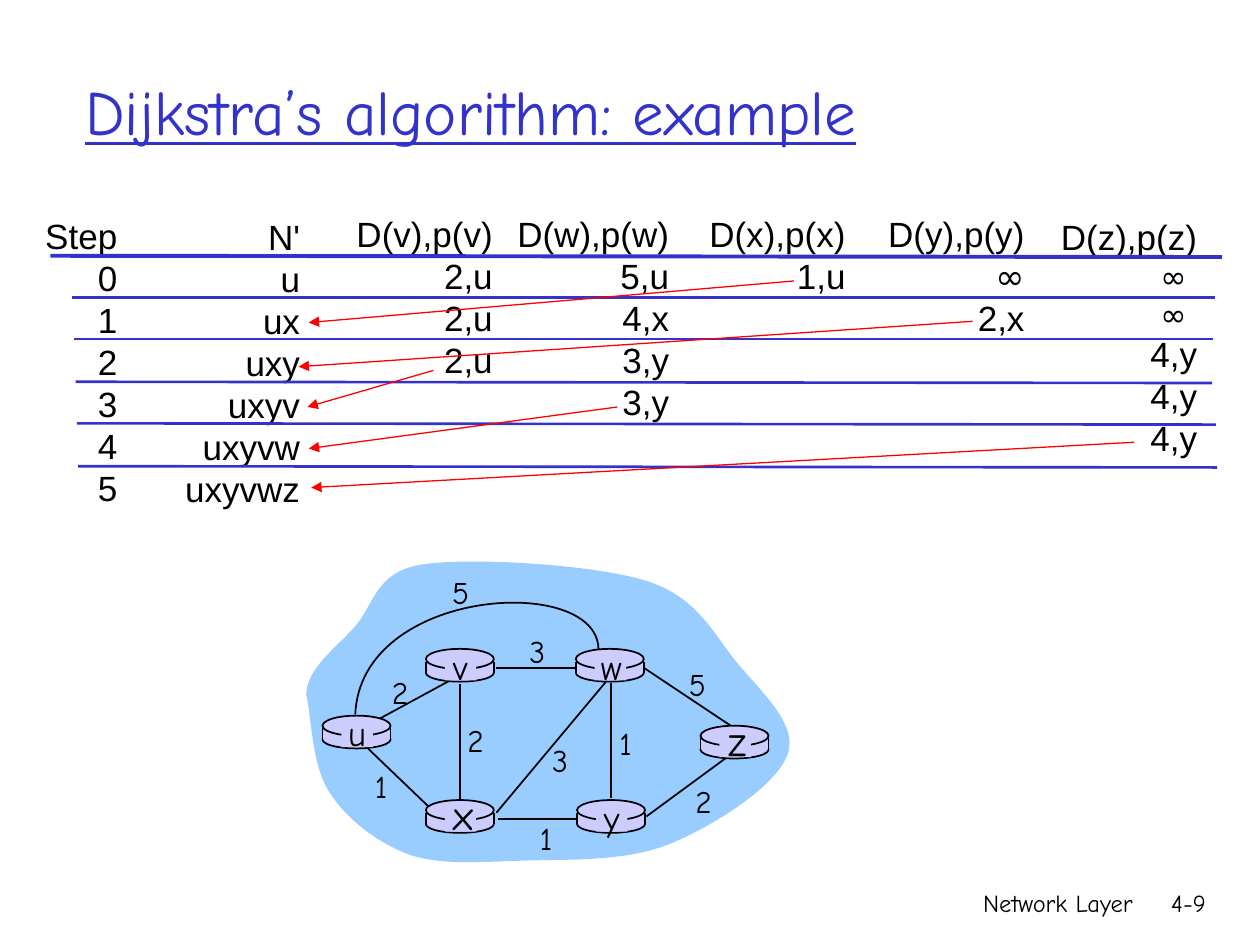
import dataclasses

import lxml.etree
import pptx
import pptx.dml.color
import pptx.enum.shapes
import pptx.enum.text
import pptx.oxml.ns
import pptx.util

Inches = pptx.util.Inches
Pt = pptx.util.Pt
qn = pptx.oxml.ns.qn
rgb = pptx.dml.color.RGBColor.from_string
ALIGN = pptx.enum.text.PP_ALIGN
ANCHOR = pptx.enum.text.MSO_ANCHOR
FIT = pptx.enum.text.MSO_AUTO_SIZE
SHAPE = pptx.enum.shapes.MSO_SHAPE
STRAIGHT = pptx.enum.shapes.MSO_CONNECTOR.STRAIGHT


@dataclasses.dataclass(frozen=True)
class Theme:
    ink = rgb("000000")
    blue = rgb("3333CC")
    red = rgb("FF0000")
    cloud = rgb("99CCFF")
    router = rgb("CCCCFF")
    hand = "Comic Neue"
    sans = "Arial"
    title = 36
    big = 24
    body = 20
    weight = 18
    footer = 14


theme = Theme()
deck = pptx.Presentation()
deck.slide_width, deck.slide_height = Inches(10), Inches(7.5)
slide = deck.slides.add_slide(deck.slide_layouts[6])
shapes = slide.shapes


def write(text, left, top, width, height, size=theme.body, font=theme.hand,
          color=theme.ink, align=ALIGN.CENTER, anchor=ANCHOR.TOP,
          underline=None, wrap=False, infinity_size=theme.body):
    box = shapes.add_textbox(Inches(left), Inches(top), Inches(width), Inches(height))
    frame = box.text_frame
    frame.word_wrap = wrap
    frame.auto_size = FIT.NONE if wrap else FIT.SHAPE_TO_FIT_TEXT
    frame.vertical_anchor = anchor
    frame.text = text
    for paragraph in frame.paragraphs:
        paragraph.alignment = align
        run = paragraph.runs[0]
        infinite = run.text.startswith("∞")
        run.font.name = theme.hand if infinite else font
        run.font.size = Pt(infinity_size if infinite else size)
        run.font.color.rgb = color
        run.font.underline = underline


def draw_line(start, end, color=theme.ink, weight=1, arrow=False):
    line = shapes.add_connector(STRAIGHT, *map(Inches, start + end))
    line.line.color.rgb = color
    line.line.width = Pt(weight)
    if arrow:
        lxml.etree.SubElement(line.line._get_or_add_ln(), qn("a:tailEnd"), type="triangle")
    lxml.etree.SubElement(line._element.spPr, qn("a:effectLst"))


write("Network Layer", 5.92, 7, 3.17, 0.5, size=theme.footer, align=ALIGN.RIGHT, wrap=True)
write("4-9", 8.93, 7, 0.74, 0.5, size=theme.footer, align=ALIGN.RIGHT, wrap=True)
write("Dijkstra’s algorithm: example", 0.58, 0.25, 8.5, 1.25, size=theme.title,
      color=theme.blue, align=ALIGN.LEFT, anchor=ANCHOR.MIDDLE, underline=True, wrap=True)

step_columns = [
    (0.26, 1.65, 0.77, ["Step", "0", "1", "2", "3", "4", "5"]),
    (1.37, 1.66, 1.11, ["N'", "u", "ux", "uxy", "uxyv", "uxyvw", "uxyvwz"]),
    (2.73, 1.64, 1.28, ["D(v),p(v)", "2,u", "2,u", "2,u"]),
    (3.96, 1.64, 1.45, ["D(w),p(w)", "5,u", "4,x", "3,y", "3,y"]),
    (5.53, 1.64, 1.28, ["D(x),p(x)", "1,u"]),
    (6.95, 1.64, 1.28, ["D(y),p(y)", "∞", "2,x"]),
    (8.32, 1.66, 1.28, ["D(z),p(z)", "∞ ", "∞ ", "4,y", "4,y", "4,y"]),
]
for left, top, width, entries in step_columns:
    write("\n".join(entries), left, top, width, 0.1 + len(entries) / 3,
          font=theme.sans, align=ALIGN.RIGHT,
          infinity_size=theme.weight if "∞ " in entries else theme.body)

draw_line((0.4, 2.03), (9.7, 2.04), theme.blue, 2.25)
row_rules = [
    ((0.57, 2.36), (9.64, 2.36)),
    ((0.59, 2.69), (9.63, 2.69)),
    ((0.6, 3.03), (9.62, 3.04)),
    ((0.61, 3.36), (9.65, 3.37)),
    ((0.62, 3.7), (9.66, 3.71)),
]
for start, end in row_rules:
    draw_line(start, end, theme.blue, 1.5)

cloud_outline = [
    (2.43, 5.51), (2.44, 5.3), (2.66, 5.15), (2.81, 4.98),
    (2.97, 4.81), (2.97, 4.54), (3.35, 4.48), (3.74, 4.42), (4.71, 4.48), (5.13, 4.61),
    (5.54, 4.74), (5.66, 5.03), (5.85, 5.26), (6.04, 5.49), (6.34, 5.75), (6.25, 5.99),
    (6.16, 6.24), (5.66, 6.56), (5.31, 6.7), (4.96, 6.84), (4.5, 6.82), (4.16, 6.83),
    (3.81, 6.84), (3.5, 6.87), (3.24, 6.78), (2.98, 6.68), (2.74, 6.49), (2.61, 6.28),
    (2.47, 6.06), (2.47, 5.66), (2.43, 5.51),
]
u_to_w = [(4.75, 5.15), (4.74, 4.55), (2.86, 4.66), (2.82, 5.67)]
for controls, closed in [(cloud_outline, True), (u_to_w, False)]:
    builder = shapes.build_freeform(*map(Inches, controls[0]), scale=1.0)
    builder.add_line_segments([tuple(map(Inches, p)) for p in controls[1:]], close=closed)
    curve = builder.convert_to_shape()
    segments = list(curve._element.iter(qn("a:lnTo")))
    for first in range(0, len(segments), 3):
        bezier = lxml.etree.Element(qn("a:cubicBezTo"))
        segments[first].addprevious(bezier)
        for segment in segments[first:first + 3]:
            bezier.append(segment[0])
            segment.getparent().remove(segment)
    curve.shadow.inherit = False
    if closed:
        curve.fill.solid()
        curve.fill.fore_color.rgb = theme.cloud
        curve.line.fill.background()
    else:
        curve.fill.background()
        curve.line.color.rgb = theme.ink
        curve.line.width = Pt(1)

edges = [
    ((3.02, 5.7), (3.61, 5.38)),
    ((4.85, 5.42), (4.85, 6.33)),
    ((3.65, 5.43), (3.65, 6.36)),
    ((3.94, 6.45), (4.81, 5.41)),
    ((5.13, 6.48), (5.77, 6.01)),
    ((4.58, 6.5), (3.95, 6.5)),
    ((3.4, 6.4), (2.92, 5.94)),
    ((4.57, 5.3), (3.94, 5.3)),
    ((5.8, 5.76), (5.11, 5.3)),
]
for start, end in edges:
    draw_line(start, end)

routers = [
    ("u", 2.56, 5.68, theme.body), ("x", 3.38, 6.35, theme.big),
    ("v", 3.38, 5.15, theme.body), ("w", 4.57, 5.15, theme.body),
    ("y", 4.58, 6.35, theme.body), ("z", 5.56, 5.76, theme.big),
]
router_parts = [
    (SHAPE.OVAL, 0, 0.12, 0.54, 0.14, True),
    (SHAPE.RECTANGLE, 0, 0.1, 0.54, 0.09, False),
    (SHAPE.OVAL, 0, 0, 0.54, 0.16, True),
    (SHAPE.RECTANGLE, 0.15, 0.02, 0.25, 0.23, False),
]
for name, left, top, size in routers:
    for kind, dx, dy, width, height, outlined in router_parts:
        part = shapes.add_shape(kind, Inches(left + dx), Inches(top + dy),
                                Inches(width), Inches(height))
        part.shadow.inherit = False
        part.fill.solid()
        part.fill.fore_color.rgb = theme.router
        if outlined:
            part.line.color.rgb = theme.ink
            part.line.width = Pt(1)
        else:
            part.line.fill.background()
    for side in (left, left + 0.54):
        draw_line((side, top + 0.1), (side, top + 0.19))
    inset, rise, width, height = (
        (0.1, 0.14, 0.39, 0.5) if size == theme.big else (0.1, 0.08, 0.35, 0.43))
    write(name, left + inset, top - rise, width, height, size=size)

edge_weights = [
    ("2", 3, 5.29), ("2", 3.6, 5.67), ("1", 2.85, 6.04), ("3", 4.27, 5.83),
    ("1", 4.16, 6.45), ("1", 4.79, 5.7), ("2", 5.41, 6.16), ("5", 5.36, 5.23),
    ("3", 4.09, 4.97), ("5", 3.48, 4.5),
]
for cost, left, top in edge_weights:
    write(cost, left, top, 0.35, 0.4, size=theme.weight)

choices = [
    ((6.3, 2.23), (2.45, 2.56)),
    ((7.72, 2.55), (2.37, 2.91)),
    ((3.44, 2.94), (2.44, 3.23)),
    ((4.9, 3.23), (2.45, 3.56)),
    ((9, 3.51), (2.47, 3.87)),
]
for start, end in choices:
    draw_line(start, end, theme.red, 0.75, arrow=True)

deck.save("out.pptx")
